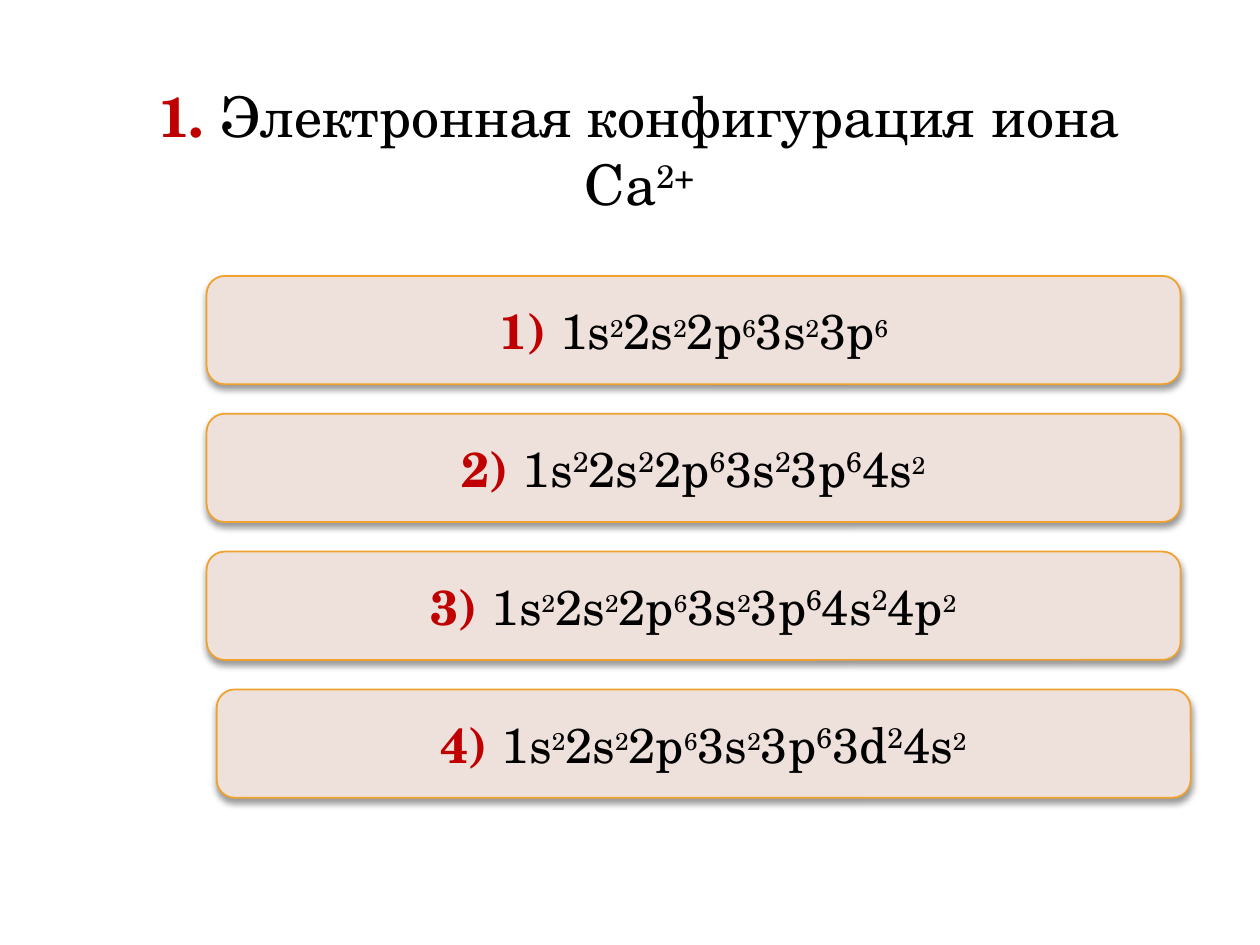
from lxml import etree
from pptx import Presentation
from pptx.dml.color import RGBColor
from pptx.enum.shapes import MSO_SHAPE
from pptx.enum.text import MSO_ANCHOR, MSO_AUTO_SIZE, PP_ALIGN
from pptx.oxml.ns import qn
from pptx.util import Inches, Pt

ROUNDED = MSO_SHAPE.ROUNDED_RECTANGLE
TOP, MIDDLE = MSO_ANCHOR.TOP, MSO_ANCHOR.MIDDLE
CENTER = PP_ALIGN.CENTER
NO_FIT = MSO_AUTO_SIZE.NONE
TITLE_ONLY = 5
FONT = "TeX Gyre Schola"
RED, BLACK, CARD, BORDER = "C00000", "000000", "EEE0DB", "F0A22E"
TITLE_SIZE, TERM_SIZE, SMALL_SIZE = 32, 28, 24
FIRST_TOP, ROW_STEP = 2.19, 1.094
CARD_WIDTH, CARD_HEIGHT = 7.73, 0.86
ANSWERS = [
    (1.64, "1s2 2s2 2p6 3s2 3p6", range(0)),
    (1.64, "1s2 2s2 2p6 3s2 3p6 4s2", range(5)),
    (1.64, "1s2 2s2 2p6 3s2 3p6 4s2 4p2", range(4, 6)),
    (1.72, "1s2 2s2 2p6 3s2 3p6 3d2 4s2", range(4, 6)),
]


def color(value):
    """Turn a hex string into a colour."""
    return RGBColor.from_string(value)


def add_span(para, text, size, tint=BLACK, bold=False, raised=False):
    """Add a run of text, optionally as a superscript."""
    span = para.add_run()
    span.text = text
    formats = {"name": FONT, "size": Pt(size), "bold": bold}
    for name, value in formats.items():
        setattr(span.font, name, value)
    span.font.color.rgb = color(tint)
    if raised:
        span.font._element.set("baseline", "30000")


def prepare_text(shape, anchor):
    """Set up a wrapped frame and return its centred paragraph."""
    frame = shape.text_frame
    formats = {"word_wrap": True, "auto_size": NO_FIT, "vertical_anchor": anchor}
    for name, value in formats.items():
        setattr(frame, name, value)
    para = frame.paragraphs[0]
    para.alignment = CENTER
    return para


def add_shadow(shape):
    """Give a shape a soft shadow straight below it."""
    shape.shadow.inherit = False
    effects = shape._element.spPr.find(qn("a:effectLst"))
    shadow = etree.SubElement(
        effects, qn("a:outerShdw"), blurRad=str(Pt(4)), dist=str(Pt(2)),
        dir="5400000", rotWithShape="0")
    tint = etree.SubElement(shadow, qn("a:srgbClr"), val=BLACK)
    etree.SubElement(tint, qn("a:alpha"), val="40000")


def add_question(page):
    """Fill the title placeholder with the question."""
    title = page.shapes.title
    place = {"left": 1.06, "top": 0.6, "width": 8.03, "height": 1.72}
    for name, value in place.items():
        setattr(title, name, Inches(value))
    para = prepare_text(title, TOP)
    add_span(para, "1. ", TITLE_SIZE, RED, bold=True)
    add_span(para, "Электронная конфигурация иона Ca", TITLE_SIZE)
    add_span(para, "2+", TITLE_SIZE, raised=True)


def add_answer(page, row, left, terms, large_exponents):
    """Add one answer card with its electron configuration."""
    top = FIRST_TOP + row * ROW_STEP
    place = (Inches(value) for value in (left, top, CARD_WIDTH, CARD_HEIGHT))
    card = page.shapes.add_shape(ROUNDED, *place)
    card.fill.solid()
    card.fill.fore_color.rgb = color(CARD)
    card.line.color.rgb = color(BORDER)
    card.line.width = Pt(1)
    add_shadow(card)
    para = prepare_text(card, MIDDLE)
    add_span(para, f"{row + 1}) ", TERM_SIZE, RED, bold=True)
    for index, term in enumerate(terms.split()):
        size = TERM_SIZE if index in large_exponents else SMALL_SIZE
        add_span(para, term[:2], TERM_SIZE)
        add_span(para, term[2:], size, raised=True)


def main():
    """Build the quiz slide and save it."""
    deck = Presentation()
    deck.slide_width, deck.slide_height = Inches(10), Inches(7.5)
    page = deck.slides.add_slide(deck.slide_layouts[TITLE_ONLY])
    add_question(page)
    for row, answer in enumerate(ANSWERS):
        add_answer(page, row, *answer)
    deck.save("out.pptx")


if __name__ == "__main__":
    main()
